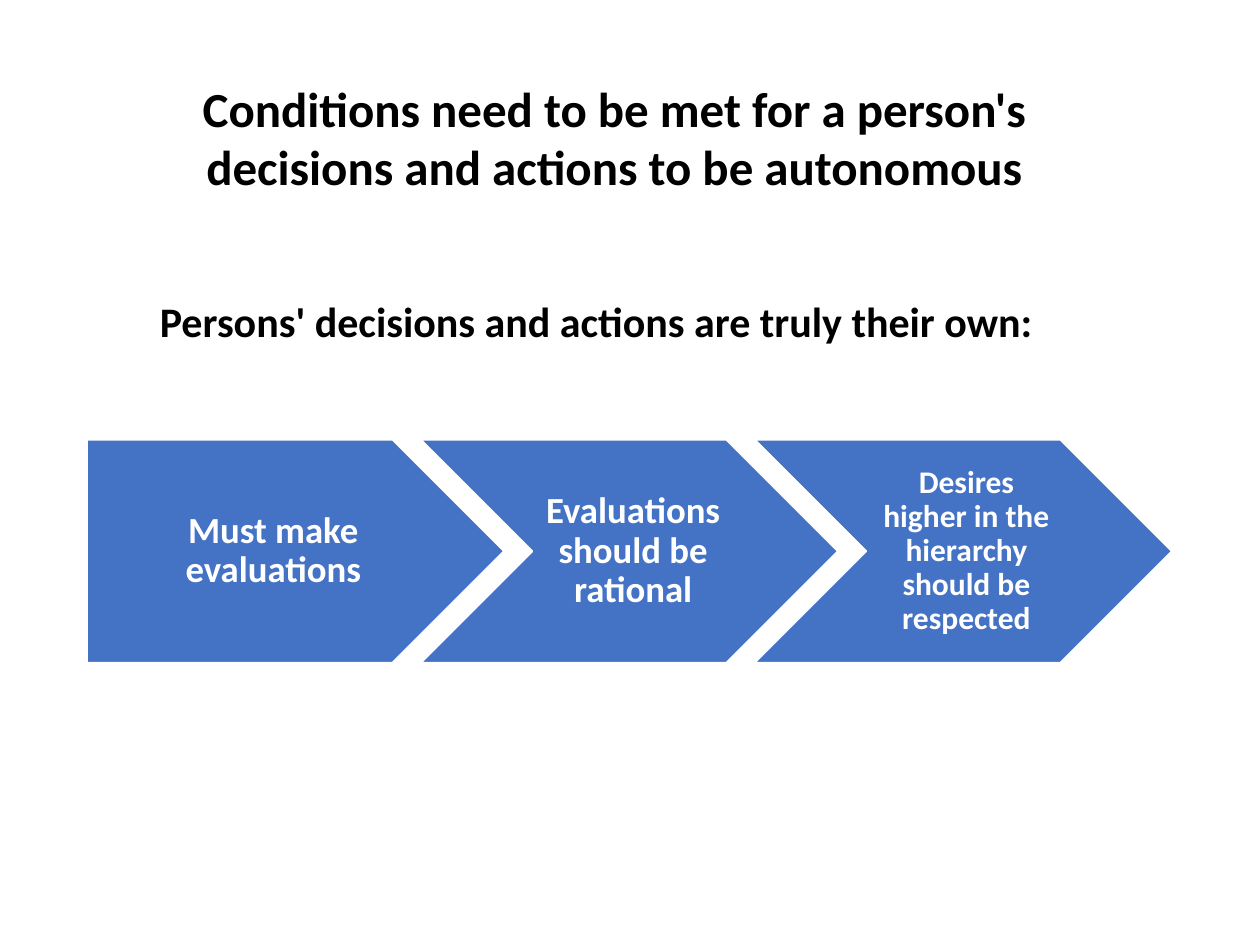
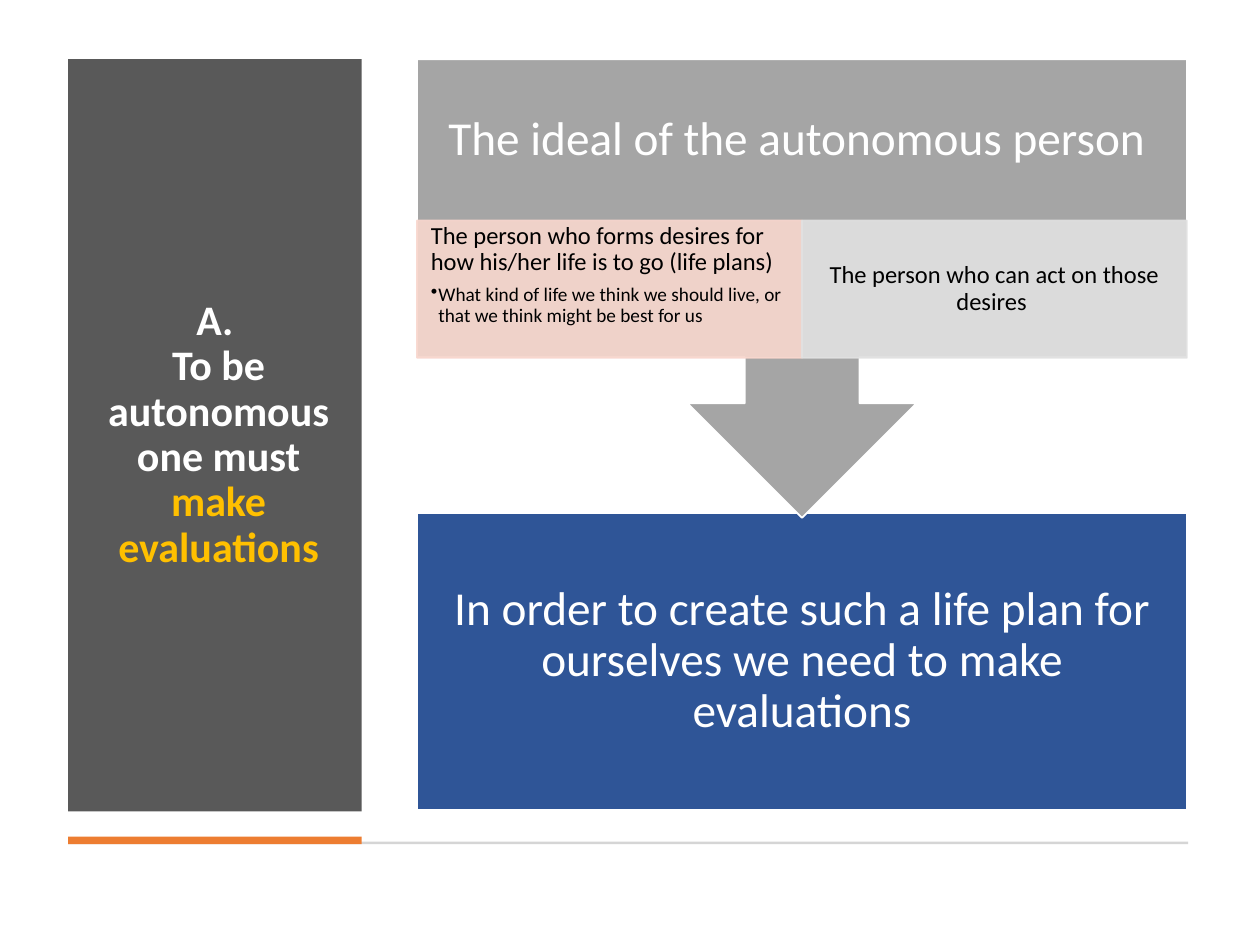
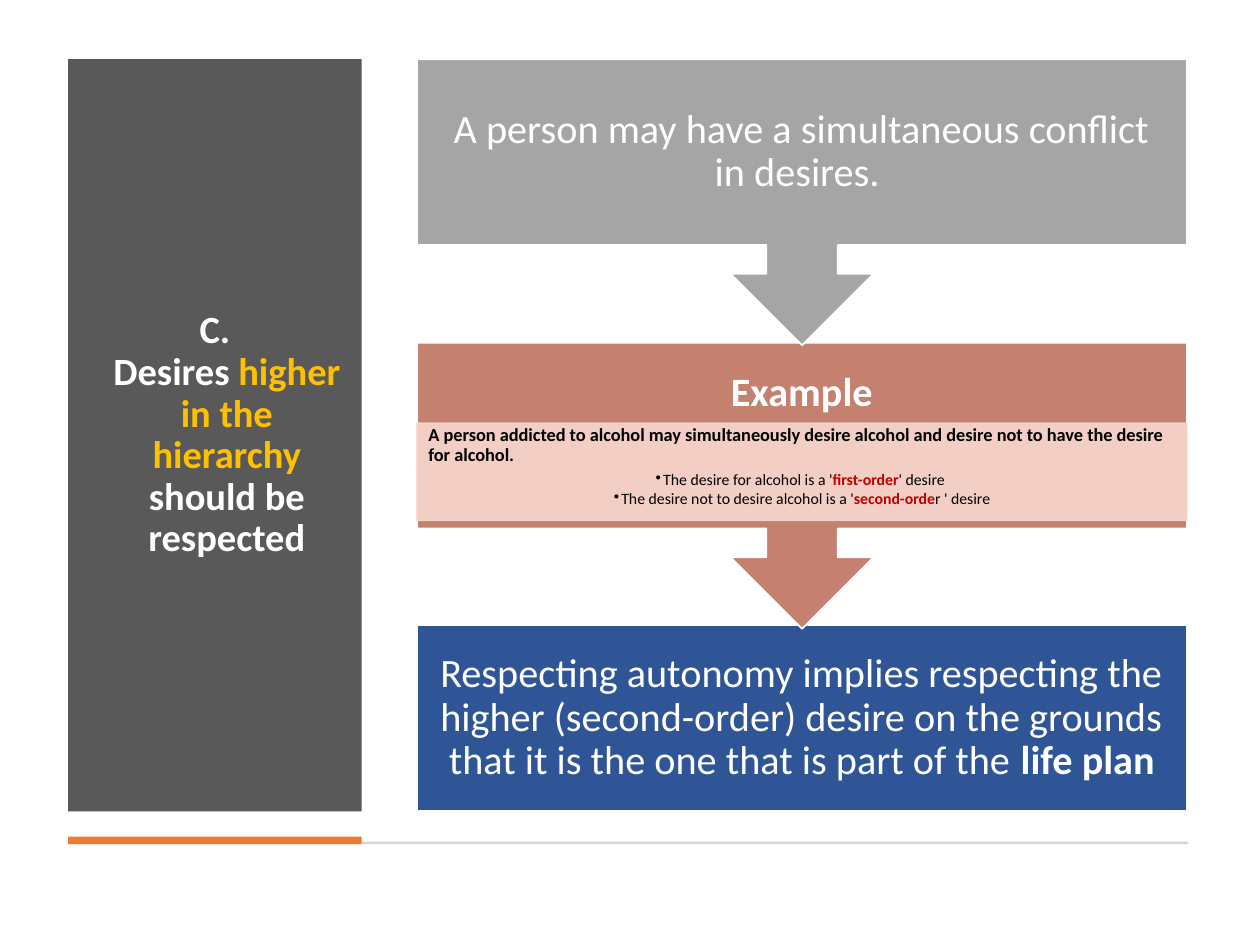
from copy import deepcopy
from dataclasses import dataclass

from lxml.etree import SubElement
from pptx import Presentation
from pptx.dml.color import RGBColor
from pptx.enum.shapes import MSO_SHAPE
from pptx.enum.text import MSO_ANCHOR, MSO_AUTO_SIZE, PP_ALIGN
from pptx.oxml.ns import qn
from pptx.util import Inches, Pt


@dataclass(frozen=True)
class Theme:
    font: str = "Calibri"
    white: str = "FFFFFF"
    black: str = "000000"
    blue: str = "4472C4"
    navy: str = "2F5597"
    charcoal: str = "595959"
    gray: str = "A5A5A5"
    pale_gray: str = "E1E1E1"
    rule_gray: str = "D5D5D5"
    clay: str = "C48170"
    blush: str = "F8D7CE"
    orange: str = "ED7D31"
    gold: str = "FFC000"
    red: str = "C00000"
    heading_size: float = 28
    lead_size: float = 24
    arrow_size: float = 21
    small_arrow_size: float = 18
    detail_size: float = 14
    point_size: float = 11
    example_size: float = 10.5
    small_point_size: float = 9


theme = Theme()


def add_box(slide, kind, at, fill=None, line=None, opacity=100, margins=(0.1, 0.05, 0.1, 0.05),
            anchor=MSO_ANCHOR.MIDDLE):
    """Add a preset shape, or a text box when kind is None."""
    place = [Inches(length) for length in at]
    if kind is None:
        shape = slide.shapes.add_textbox(*place)
    else:
        shape = slide.shapes.add_shape(kind, *place)
        shape.shadow.inherit = False
        shape.fill.solid()
        shape.fill.fore_color.rgb = RGBColor.from_string(fill)
        if line:
            shape.line.color.rgb = RGBColor.from_string(line)
            shape.line.width = Pt(1)
        else:
            shape.line.fill.background()
        if opacity < 100:
            for color in shape._element.spPr.iter(qn("a:srgbClr")):
                SubElement(color, qn("a:alpha"), val=str(opacity * 1000))
    frame = shape.text_frame
    frame.word_wrap = True
    frame.vertical_anchor = anchor
    frame.margin_left, frame.margin_top, frame.margin_right, frame.margin_bottom = map(Inches, margins)
    return shape


def write(shape, runs, size, align=PP_ALIGN.CENTER, spacing=0.9, after=0.35,
          indent=0, bullet=None, number=None):
    """Add a paragraph of (text, color, bold) runs; a number stands on its own line."""
    frame = shape.text_frame
    paragraph = frame.paragraphs[0] if not frame.text else frame.add_paragraph()
    paragraph.alignment = align
    paragraph.line_spacing = spacing
    paragraph.space_after = Pt(round(after * size, 2))
    properties = paragraph._p.get_or_add_pPr()
    if indent:
        properties.set("marL", str(Inches(indent)))
        properties.set("indent", str(-Inches(indent)))
    if bullet:
        paragraph.level = 1
        SubElement(properties, qn("a:buChar"), char=bullet)
    if number:
        SubElement(properties, qn("a:buAutoNum"), type="alphaUcPeriod", startAt=str(number))
        paragraph.add_line_break()
    for text, color, bold in runs:
        run = paragraph.add_run()
        run.text = text
        run.font.name = theme.font
        run.font.size = Pt(size)
        run.font.bold = bold
        run.font.color.rgb = RGBColor.from_string(color)
    if number:
        line_break = paragraph._p.find(qn("a:br"))
        line_break.append(deepcopy(paragraph.runs[0]._r.rPr))


presentation = Presentation()
presentation.slide_width = Inches(10)
presentation.slide_height = Inches(7.5)
title_only = presentation.slide_layouts[5]

# Slide 1: heading and lead sentence
slide = presentation.slides.add_slide(title_only)
title = slide.shapes.title
title.left, title.top, title.width, title.height = map(Inches, (0.86, 0.57, 8.03, 1.04))
title.text_frame.auto_size = MSO_AUTO_SIZE.NONE
title.text_frame.vertical_anchor = MSO_ANCHOR.TOP
write(title, [("Conditions need to be met for a person's decisions and actions to be autonomous",
               theme.black, True)], theme.heading_size, spacing=1, after=0)
lead = add_box(slide, None, (1.17, 2.3, 7.22, 0.5), anchor=MSO_ANCHOR.TOP)
write(lead, [("Persons' decisions and actions are truly their own:", theme.black, True)],
      theme.lead_size, PP_ALIGN.LEFT, spacing=1, after=0)

# Slide 1: row of conditions
conditions = [
    (MSO_SHAPE.PENTAGON, "Must make evaluations", theme.arrow_size, 0.12),
    (MSO_SHAPE.CHEVRON, "Evaluations should be rational", theme.arrow_size, 0.09),
    (MSO_SHAPE.CHEVRON, "Desires higher in the hierarchy should be respected", theme.small_arrow_size, 0.08),
]
for index, (kind, text, size, left_margin) in enumerate(conditions):
    arrow = add_box(slide, kind, (0.69 + 2.65 * index, 3.49, 3.31, 1.77), theme.blue, theme.white,
                    margins=(left_margin, 0.05, 0.03, 0.05))
    write(arrow, [(text, theme.white, True)], size)

# Slides 2 and 3: each step is top, height, heading height, fill, runs
PANEL_LEFT, PANEL_WIDTH = 3.31, 6.11
arguments = [
    dict(number=1, title_size=24, title_indent=0.06, step_size=27, margin=0.21,
         title=[("To be autonomous one must ", theme.white, True),
                ("make evaluations", theme.gold, True)],
         conclusion=(4.07, 2.36, [
             ("In order to create such a life plan for ourselves we need to make evaluations",
              theme.white, False)]),
         callouts=[(0.47, 3.64, 1.28, theme.gray,
                    [("The ideal of the autonomous person ", theme.white, False)])]),
    dict(number=3, title_size=22, title_indent=0.19, step_size=23, margin=0.18,
         title=[("Desires ", theme.white, True),
                ("higher in the hierarchy ", theme.gold, True),
                ("should be respected", theme.white, True)],
         conclusion=(4.96, 1.48, [
             ("Respecting autonomy implies respecting the higher (second-order) desire on the grounds "
              "that it is the one that is part of the ", theme.white, False),
             ("life plan", theme.white, True)]),
         callouts=[(2.72, 2.27, 0.8, theme.clay, [("Example", theme.white, True)]),
                   (0.47, 2.27, 1.47, theme.gray,
                    [("A person may have a simultaneous conflict in desires. ", theme.white, False)])]),
]
argument_slides = []
for argument in arguments:
    slide = presentation.slides.add_slide(title_only)
    argument_slides.append(slide)

    # Title panel
    title = slide.shapes.title
    title.left, title.top, title.width, title.height = map(Inches, (0.54, 0.47, 2.33, 5.97))
    title.fill.solid()
    title.fill.fore_color.rgb = RGBColor.from_string(theme.charcoal)
    title.text_frame.auto_size = MSO_AUTO_SIZE.NONE
    title.text_frame.vertical_anchor = MSO_ANCHOR.MIDDLE
    write(title, argument["title"], argument["title_size"], after=0,
          indent=argument["title_indent"], number=argument["number"])

    # Footer rule
    add_box(slide, MSO_SHAPE.RECTANGLE, (0.54, 6.68, 8.89, 0.02), theme.rule_gray)
    add_box(slide, MSO_SHAPE.RECTANGLE, (0.54, 6.64, 2.33, 0.06), theme.orange)

    # Steps, from the conclusion upwards
    margins = (argument["margin"],) * 4
    top, height, runs = argument["conclusion"]
    conclusion = add_box(slide, MSO_SHAPE.RECTANGLE, (PANEL_LEFT, top, PANEL_WIDTH, height),
                         theme.navy, theme.white, margins=margins)
    write(conclusion, runs, argument["step_size"])
    for top, height, heading_height, fill, runs in argument["callouts"]:
        callout = add_box(slide, MSO_SHAPE.UP_ARROW_CALLOUT, (PANEL_LEFT, top, PANEL_WIDTH, height),
                          fill, theme.white)
        callout.rotation = 180
        heading = add_box(slide, None, (PANEL_LEFT, top, PANEL_WIDTH, heading_height), margins=margins)
        write(heading, runs, argument["step_size"])

# Slide 2: the two halves of the ideal
ideal_slide, example_slide = argument_slides
half = PANEL_WIDTH / 2
detail_margins = (0.11, 0.02, 0.11, 0.02)
desires = add_box(ideal_slide, MSO_SHAPE.RECTANGLE, (PANEL_LEFT, 1.75, half, 1.09), theme.blush,
                  theme.blush, 90, detail_margins, MSO_ANCHOR.TOP)
write(desires, [("The person who forms desires for how his/her life is to go (life plans)",
                 theme.black, False)], theme.detail_size, PP_ALIGN.LEFT)
write(desires, [("What kind of life we think we should live, or that we think might be best for us",
                 theme.black, False)], theme.point_size, PP_ALIGN.LEFT, after=0.15, indent=0.06, bullet="•")
action = add_box(ideal_slide, MSO_SHAPE.RECTANGLE, (PANEL_LEFT + half, 1.75, half, 1.09),
                 theme.pale_gray, theme.pale_gray, 90, detail_margins)
write(action, [("The person who can act on those desires ", theme.black, False)], theme.detail_size)

# Slide 3: the example
example = add_box(example_slide, MSO_SHAPE.RECTANGLE, (PANEL_LEFT, 3.36, PANEL_WIDTH, 0.77),
                  theme.blush, theme.blush, 90, (0.09, 0.02, 0.09, 0.02), MSO_ANCHOR.TOP)
write(example, [("A person addicted to alcohol may simultaneously desire alcohol and desire not to have "
                 "the desire for alcohol.", theme.black, True)], theme.example_size, PP_ALIGN.LEFT)
for opening, order, ending in [
    ("The desire for alcohol is a '", "first-order", "' desire "),
    ("The desire not to desire alcohol is a '", "second-orde", "r ' desire"),
]:
    write(example, [(opening, theme.black, False), (order, theme.red, True), (ending, theme.black, False)],
          theme.small_point_size, after=0.15, indent=0.06, bullet="•")

presentation.save("out.pptx")
